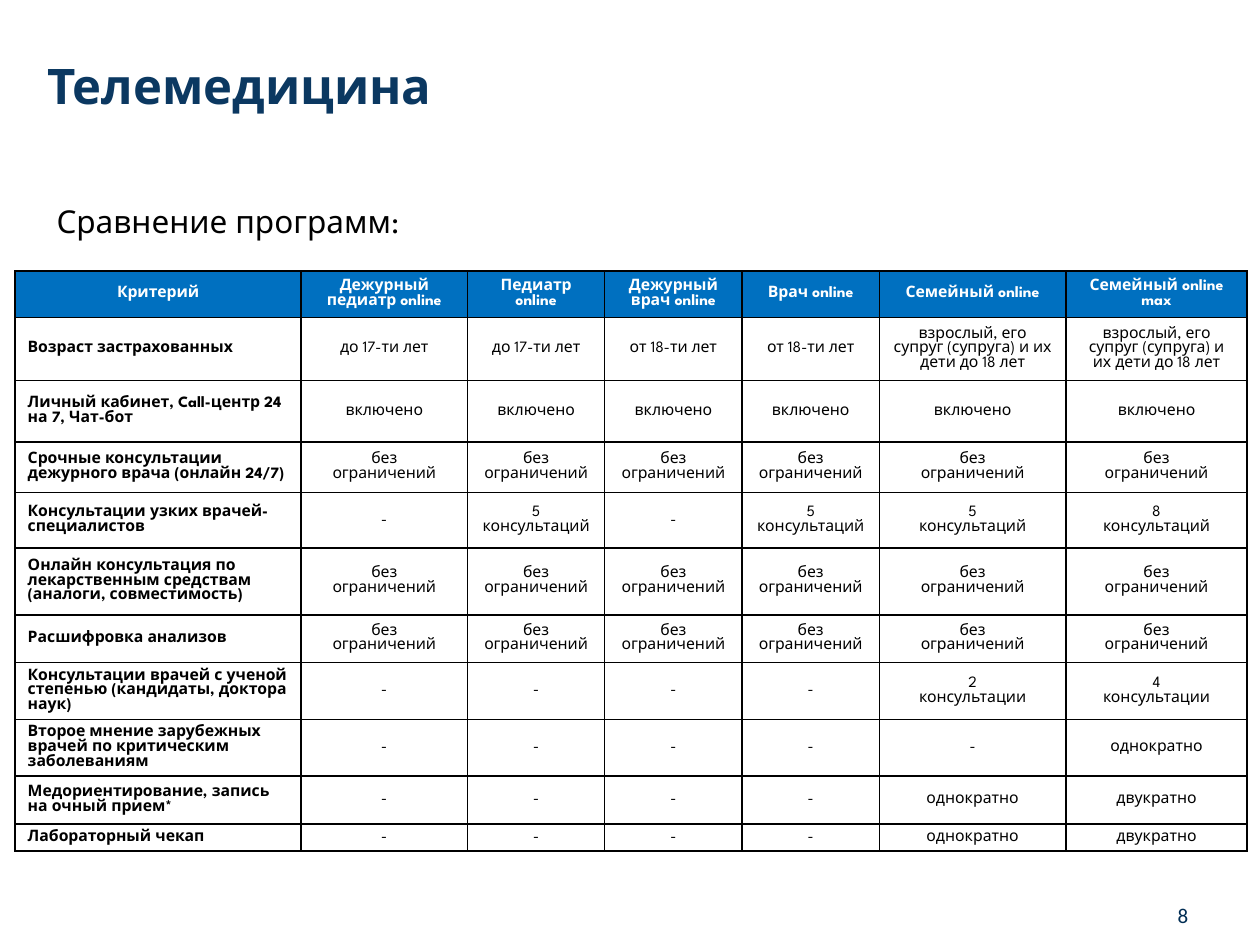
from lxml import etree
from pptx import Presentation
from pptx.dml.color import RGBColor
from pptx.enum.text import MSO_ANCHOR, MSO_AUTO_SIZE, PP_ALIGN
from pptx.oxml.ns import qn
from pptx.util import Inches, Pt

LEFT, CENTER, RIGHT = PP_ALIGN.LEFT, PP_ALIGN.CENTER, PP_ALIGN.RIGHT
TOP, MIDDLE = MSO_ANCHOR.TOP, MSO_ANCHOR.MIDDLE
FIXED = MSO_AUTO_SIZE.NONE

WIDTHS = [2.27, 1.32, 1.09, 1.09, 1.09, 1.48, 1.44]
HEIGHTS = [0.37, 0.5, 0.49, 0.4, 0.44, 0.53, 0.38, 0.38, 0.38, 0.38, 0.2]

FREE = "без ограничений"
FIVE = "5 консультаций"
FAMILY = "взрослый, его супруг (супруга) и их дети до 18 лет"
ONCE, TWICE = "однократно", "двукратно"


def split(text):
    """Put the last word in a paragraph of its own."""
    return text.replace(" ", "\n")


NO_LIMIT = [split(FREE)] + [FREE] * 3 + [split(FREE)] * 2
HEAD = ["Критерий", "Дежурный педиатр online", "Педиатр online",
        "Дежурный врач online", "Врач online", "Семейный online",
        "Семейный online max"]
ROWS = [
    ["Возраст застрахованных"] + ["до 17-ти лет"] * 2
    + ["от 18-ти лет"] * 2 + [FAMILY] * 2,
    ["Личный кабинет, Call-центр 24 на 7, Чат-бот"] + ["включено"] * 6,
    ["Срочные консультации дежурного врача (онлайн 24/7)"] + NO_LIMIT,
    ["Консультации узких врачей-специалистов", "-", FIVE, "-", FIVE,
     split(FIVE), split("8 консультаций")],
    ["Онлайн консультация по лекарственным средствам "
     "(аналоги, совместимость)"] + NO_LIMIT,
    ["Расшифровка анализов"] + NO_LIMIT,
    ["Консультации врачей с ученой степенью (кандидаты, доктора наук)"]
    + ["-"] * 4 + [split("2 консультации"), split("4 консультации")],
    ["Второе мнение зарубежных врачей по критическим заболеваниям"]
    + ["-"] * 5 + [ONCE],
    ["Медориентирование, запись на очный прием*"] + ["-"] * 4 + [ONCE, TWICE],
    ["Лабораторный чекап"] + ["-"] * 4 + [ONCE, TWICE],
]


def color(code):
    return RGBColor.from_string(code)


def write(frame, text, size=9, font="League Spartan", ink="000000",
          bold=False, align=LEFT):
    frame.word_wrap = True
    frame.text = text
    for para in frame.paragraphs:
        para.alignment = align
        for run in para.runs:
            run.font.size = Pt(size)
            run.font.name = font
            run.font.bold = bold
            run.font.color.rgb = color(ink)


def border(cell, ink="000000", width=1):
    props = cell._tc.get_or_add_tcPr()
    for side in ("lnL", "lnR", "lnT", "lnB"):
        line = etree.SubElement(props, qn("a:" + side), w=str(Pt(width)))
        fill = etree.SubElement(line, qn("a:solidFill"))
        etree.SubElement(fill, qn("a:srgbClr"), val=ink)


class Deck:
    """Holds the colours and the current slide."""
    navy, blue, white, page = "0B3861", "0070C0", "FFFFFF", "002D54"

    def __init__(self):
        self.file = Presentation()
        self.file.slide_width = Inches(10)
        self.file.slide_height = Inches(7.5)
        self.slide = self.file.slides.add_slide(self.file.slide_layouts[5])

    def title(self, text, x, y, w, h):
        shape = self.slide.shapes.title
        shape.left, shape.top = Inches(x), Inches(y)
        shape.width, shape.height = Inches(w), Inches(h)
        shape.text_frame.auto_size = FIXED
        shape.text_frame.vertical_anchor = MIDDLE
        write(shape.text_frame, text, size=28, ink=self.navy, bold=True)

    def label(self, text, x, y, w, h, anchor=TOP, **style):
        box = self.slide.shapes.add_textbox(
            Inches(x), Inches(y), Inches(w), Inches(h))
        box.text_frame.vertical_anchor = anchor
        write(box.text_frame, text, **style)

    def cell(self, cell, text, fill, **style):
        border(cell)
        cell.fill.solid()
        cell.fill.fore_color.rgb = color(fill)
        cell.vertical_anchor = MIDDLE
        write(cell.text_frame, text, **style)

    def table(self, head, rows, x, y, widths, heights):
        grid = self.slide.shapes.add_table(
            len(heights), len(widths), Inches(x), Inches(y),
            Inches(sum(widths)), Inches(sum(heights))).table
        grid.first_row = grid.horz_banding = False
        for col, width in zip(grid.columns, widths):
            col.width = Inches(width)
        for row, height in zip(grid.rows, heights):
            row.height = Inches(height)
        for c, text in enumerate(head):
            self.cell(grid.cell(0, c), text, self.blue, ink=self.white,
                      bold=True, align=CENTER)
        for r, row in enumerate(rows, 1):
            for c, text in enumerate(row):
                self.cell(grid.cell(r, c), text, self.white, bold=c == 0,
                          align=CENTER if c else LEFT)


def main():
    deck = Deck()
    deck.title("Телемедицина", 0.28, 0.05, 7.01, 1.25)
    deck.table(HEAD, ROWS, 0.12, 2.15, WIDTHS, HEIGHTS)
    deck.label("Сравнение программ:", 0.35, 1.55, 8.82, 0.45, size=18)
    deck.label("8", 7.2, 7.06, 2.33, 0.4, anchor=MIDDLE, size=12,
               font="Calibri", ink=deck.page, align=RIGHT)
    deck.file.save("out.pptx")


if __name__ == "__main__":
    main()
